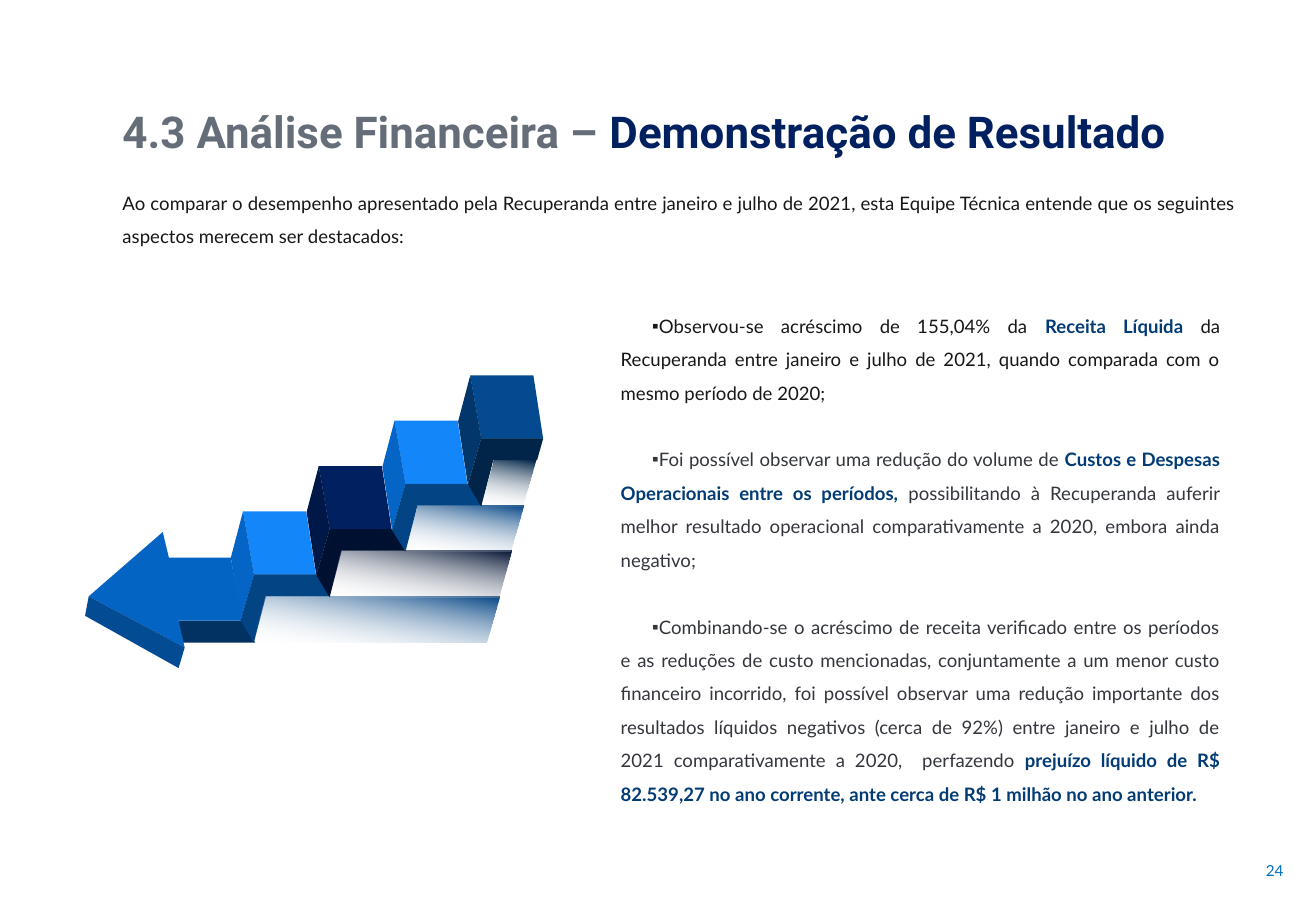
import pptx
import pptx.util
import pptx.dml.color
import pptx.enum.text
from pptx.oxml.ns import qn
from lxml import etree

Inches, Pt = pptx.util.Inches, pptx.util.Pt
ALIGN = pptx.enum.text.PP_ALIGN
ANCHOR = pptx.enum.text.MSO_ANCHOR
AUTO = pptx.enum.text.MSO_AUTO_SIZE

# Content: each run is (text, colour, bold)
DARK, GREY, BLUE = "181717", "33363C", "033C75"
TITLE = [("4.3 Análise Financeira – ", "656D78", True),
         ("Demonstração de Resultado", "002060", True)]
INTRO = [("Ao comparar o desempenho apresentado pela Recuperanda entre janeiro e julho de 2021, "
          "esta Equipe Técnica entende que os seguintes aspectos merecem ser destacados:", DARK, False)]
FINDINGS = [
    [("Observou-se acréscimo de 155,04% da ", DARK, False),
     ("Receita Líquida ", BLUE, True),
     ("da Recuperanda entre janeiro e julho de 2021, quando comparada com o mesmo período "
      "de 2020;", DARK, False)],
    [("Foi possível observar uma redução do volume de ", GREY, False),
     ("Custos e Despesas Operacionais entre os períodos, ", BLUE, True),
     ("possibilitando à Recuperanda auferir melhor resultado operacional comparativamente a "
      "2020, embora ainda negativo;", GREY, False)],
    [("Combinando-se o acréscimo de receita verificado entre os períodos e as reduções de custo "
      "mencionadas, conjuntamente a um menor custo financeiro incorrido, foi possível observar "
      "uma redução importante dos resultados líquidos negativos (cerca de 92%) entre janeiro e "
      "julho de 2021 comparativamente a 2020,  perfazendo ", GREY, False),
     ("prejuízo líquido de R$ 82.539,27 no ano corrente, ante cerca de R$ 1 milhão no ano "
      "anterior.", BLUE, True)],
]
PAGE = [("24", "0070C0", False)]

# Arrow parts: (colour, points)
ARROW = [
    ("023262", [(1.99, 5.11), (1.47, 5.11), (1.47, 5.29), (2.1, 5.29)]),
    ("0464C4", [(1.52, 5.33), (0.73, 4.91), (1.34, 4.38), (1.39, 4.59),
                (1.9, 4.59), (1.99, 5.11), (1.47, 5.11)]),
    ("034B93", [(1.47, 5.5), (1.52, 5.33), (0.73, 4.91), (0.7, 5.07)]),
]
# Stairs: (top, side, front colour, front width)
STEPS = [("1387FA", "0465C6", "034484", 0.72),
         ("002060", "001848", "001030", 0.72),
         ("1387FA", "0465C6", "034484", 0.72),
         ("034A90", "02376C", "012548", 0.55)]
STEP_X, STEP_Y = 2.0, 4.21
RUN, RISE = Inches(1.87) / Inches(3), Inches(1.12) / Inches(3)
SHADOW_RIGHT, SHADOW_SHIFT = 4.0, 0.1


def rgb(color):
    return pptx.dml.color.RGBColor.from_string(color)


def polygon(points, color, fade=False):
    corners = [(Inches(x), Inches(y)) for x, y in points]
    builder = s.shapes.build_freeform(*corners[0])
    builder.add_line_segments(corners[1:], close=True)
    sp = builder.convert_to_shape()
    sp.shadow.inherit = False
    sp.line.fill.background()
    if not fade:
        sp.fill.solid()
        sp.fill.fore_color.rgb = rgb(color)
        return
    sp.fill.gradient()
    sp.fill.gradient_angle = 260
    for stop, stop_color in zip(sp.fill.gradient_stops, (color, "FFFFFF")):
        stop.color.rgb = rgb(stop_color)
    last = list(sp._element.iter(qn("a:gs")))[-1][0]
    etree.SubElement(last, qn("a:alpha")).set("val", "0")


def text(box, paragraphs, size, font="Lato", align=ALIGN.JUSTIFY, spacing=1.5,
         bullet=False, **frame):
    tf = s.shapes.add_textbox(*(Inches(v) for v in box)).text_frame
    for name, value in {"word_wrap": True, **frame}.items():
        setattr(tf, name, value)
    for i, runs in enumerate(paragraphs):
        p = tf.add_paragraph() if i else tf.paragraphs[0]
        p.alignment, p.line_spacing = align, spacing
        if i:
            p.space_before = Pt(19.8)
        if bullet:
            pPr = p._p.get_or_add_pPr()
            pPr.set("marL", "0")
            pPr.set("indent", str(Inches(0.26)))
            etree.SubElement(pPr, qn("a:buFont")).set("typeface", "Arial")
            etree.SubElement(pPr, qn("a:buChar")).set("char", "▪")
        for words, color, bold in runs:
            r = p.add_run()
            r.text = words
            for name, value in {"name": font, "size": Pt(size), "bold": bold}.items():
                setattr(r.font, name, value)
            r.font.color.rgb = rgb(color)


prs = pptx.Presentation()
prs.slide_width, prs.slide_height = Inches(10.83), Inches(7.5)
s = prs.slides.add_slide(prs.slide_layouts[6])

# Texts
text((9.87, 6.92, 0.79, 0.5), [PAGE], 9, align=ALIGN.RIGHT, spacing=1.0,
     vertical_anchor=ANCHOR.MIDDLE)
text((0.91, 0.81, 9.36, 0.54), [TITLE], 26, font="Roboto", align=ALIGN.LEFT, spacing=1.0,
     word_wrap=False, auto_size=AUTO.SHAPE_TO_FIT_TEXT)
text((0.91, 1.44, 9.36, 0.66), [INTRO], 11, auto_size=AUTO.SHAPE_TO_FIT_TEXT)
text((5.01, 2.45, 5.13, 3.96), FINDINGS, 11, bullet=True, auto_size=AUTO.SHAPE_TO_FIT_TEXT)

# Arrow head
for color, points in ARROW:
    polygon(points, color)

# Stairs with fading shadows
for i, (top, side, front, width) in enumerate(STEPS):
    x, y = STEP_X + i * RUN, STEP_Y - i * RISE
    right = SHADOW_RIGHT + i * SHADOW_SHIFT
    faces = [
        (top, [(0.52, 0), (0, 0), (0.09, 0.52), (0.6, 0.52)]),
        (side, [(-0.1, 0.38), (0, 0), (0.09, 0.52), (-0.02, 0.9)]),
        (front, [(0.6, 0.52), (0.09, 0.52), (-0.02, 0.9), (0.09, 1.08), (0.19, 0.7),
                 (width, 0.7)]),
    ]
    for color, points in faces:
        polygon([(x + dx, y + dy) for dx, dy in points], color)
    polygon([(x + 0.09, y + 1.08), (right, y + 1.08), (right + 0.11, y + 0.7),
             (x + 0.19, y + 0.7)], front, fade=True)

prs.save("out.pptx")
